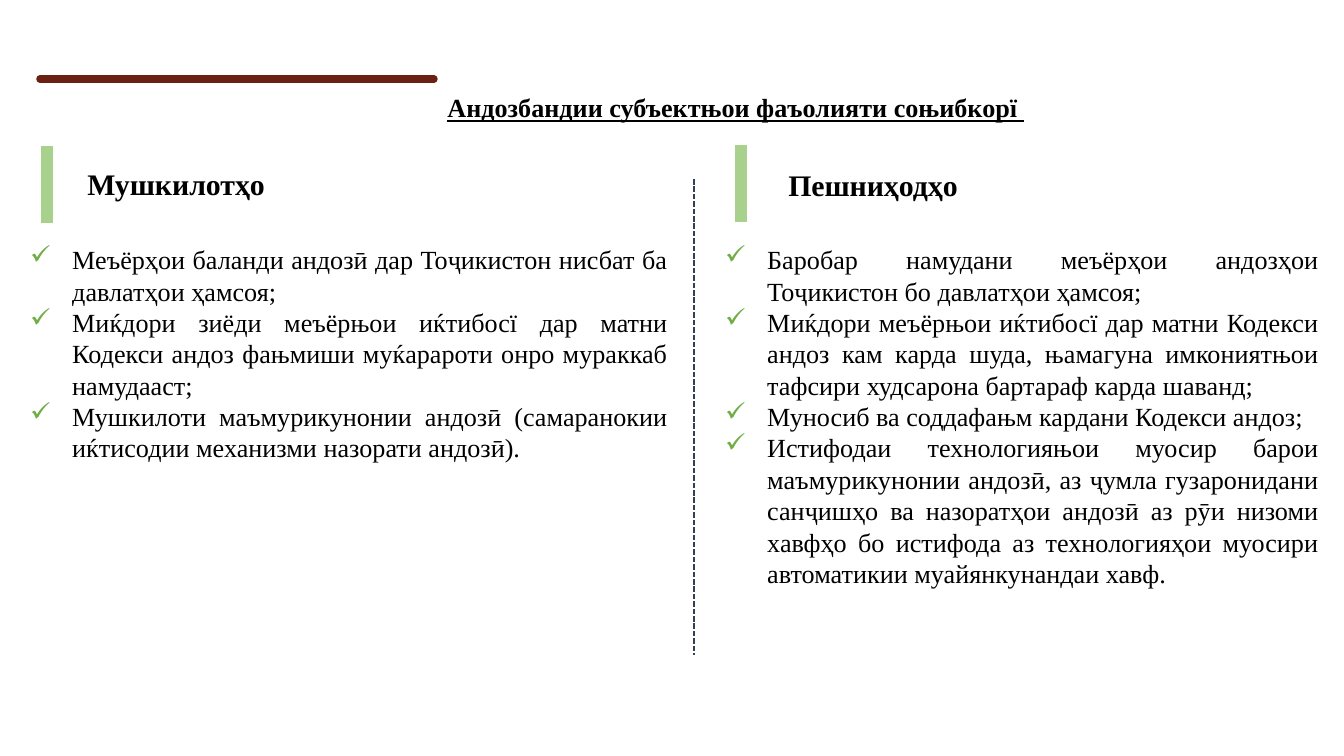
"""Builds a two-column slide of tax problems and proposals."""
import dataclasses

import lxml.etree
import pptx
import pptx.dml.color
import pptx.enum.dml
import pptx.enum.shapes
import pptx.enum.text
import pptx.oxml.ns
import pptx.util

PX = 914400 / 134.4


@dataclasses.dataclass(frozen=True)
class Theme:
    font: str = "Times New Roman"
    text: str = "000000"
    rule: str = "6A2012"
    divider: str = "34404F"
    bar: str = "A9D18E"
    check: str = "70AD47"
    body_size: int = 14
    heading_size: int = 16


THEME = Theme()

TITLE = "Андозбандии субъектњои фаъолияти соњибкорї "
PROBLEMS = [
    "Меъёрҳои баланди андозӣ дар Тоҷикистон нисбат ба давлатҳои ҳамсоя;",
    "Миќдори зиёди меъёрњои иќтибосї дар матни Кодекси андоз фањмиши "
    "муќарароти онро мураккаб намудааст;",
    "Мушкилоти маъмурикунонии андозӣ (самаранокии иќтисодии механизми "
    "назорати андозӣ).",
]
PROPOSALS = [
    "Баробар намудани меъёрҳои андозҳои Тоҷикистон бо давлатҳои ҳамсоя;",
    "Миќдори меъёрњои иќтибосї дар матни Кодекси андоз кам карда шуда, "
    "њамагуна имкониятњои тафсири худсарона бартараф карда шаванд;",
    "Муносиб ва соддафањм кардани Кодекси андоз;",
    "Истифодаи технологияњои муосир барои маъмурикунонии андозӣ, аз ҷумла "
    "гузаронидани санҷишҳо ва назоратҳои андозӣ аз рӯи низоми хавфҳо бо "
    "истифода аз технологияҳои муосири автоматикии муайянкунандаи хавф.",
]


def px(length):
    return pptx.util.Emu(round(length * PX))


def add_child(parent, tag, **attributes):
    return lxml.etree.SubElement(parent, pptx.oxml.ns.qn(tag), attributes)


def add_line(slide, start, end, color, width, dash=None, cap="flat"):
    line = slide.shapes.add_connector(
        pptx.enum.shapes.MSO_CONNECTOR.STRAIGHT, *map(px, start + end))
    line.line.color.rgb = pptx.dml.color.RGBColor.from_string(color)
    line.line.width = pptx.util.Pt(width)
    if dash is not None:
        line.line.dash_style = dash
    line.line._get_or_add_ln().set("cap", cap)
    add_child(line._element.spPr, "a:effectLst")


def prepare_frame(box):
    frame = box.text_frame
    frame.word_wrap = True
    frame.auto_size = pptx.enum.text.MSO_AUTO_SIZE.NONE
    frame.vertical_anchor = pptx.enum.text.MSO_ANCHOR.TOP
    return frame


def add_text_box(slide, bounds):
    return prepare_frame(slide.shapes.add_textbox(*map(px, bounds)))


def add_span(para, text, size, bold=False, underline=False):
    span = para.add_run()
    span.text = text
    span.font.name = THEME.font
    span.font.size = pptx.util.Pt(size)
    span.font.bold = bold
    span.font.underline = underline
    span.font.color.rgb = pptx.dml.color.RGBColor.from_string(THEME.text)


def set_check_bullet(para):
    properties = para._p.get_or_add_pPr()
    properties.set("marL", str(px(42)))
    properties.set("indent", str(-px(42)))
    color = add_child(properties, "a:buClr")
    add_child(color, "a:srgbClr", val=THEME.check)
    add_child(properties, "a:buChar", char="✓")


def place_title(slide):
    title = slide.shapes.title
    title.left, title.top, title.width, title.height = map(px, (434, 85, 681, 46))
    para = prepare_frame(title).paragraphs[0]
    para.alignment = pptx.enum.text.PP_ALIGN.LEFT
    add_span(para, TITLE, THEME.body_size, bold=True, underline=True)


def add_heading(slide, text, bar_left, bar_top, left, top):
    add_line(slide, (bar_left, bar_top), (bar_left, bar_top + 77), THEME.bar, 6.5)
    frame = add_text_box(slide, (left, top, 422, 50))
    add_span(frame.paragraphs[0], text, THEME.heading_size, bold=True)


def add_checklist(slide, items, bounds):
    frame = add_text_box(slide, bounds)
    for index, item in enumerate(items):
        para = frame.add_paragraph() if index else frame.paragraphs[0]
        para.alignment = pptx.enum.text.PP_ALIGN.JUSTIFY
        set_check_bullet(para)
        add_span(para, item, THEME.body_size)


def main():
    deck = pptx.Presentation()
    deck.slide_width, deck.slide_height = px(1344), px(756)
    slide = deck.slides.add_slide(deck.slide_layouts.get_by_name("Title Only"))

    add_line(slide, (40, 79), (434, 79), THEME.rule, 4, cap="rnd")
    place_title(slide)
    add_line(slide, (694, 179), (694, 655), THEME.divider, 1,
             dash=pptx.enum.dml.MSO_LINE.SQUARE_DOT)
    add_heading(slide, "Мушкилотҳо", 47, 146, 74, 159)
    add_checklist(slide, PROBLEMS, (17, 237, 664, 336))
    add_heading(slide, "Пешниҳодҳо", 741, 145, 775, 160)
    add_checklist(slide, PROPOSALS, (712, 237, 620, 465))
    deck.save("out.pptx")


if __name__ == "__main__":
    main()
